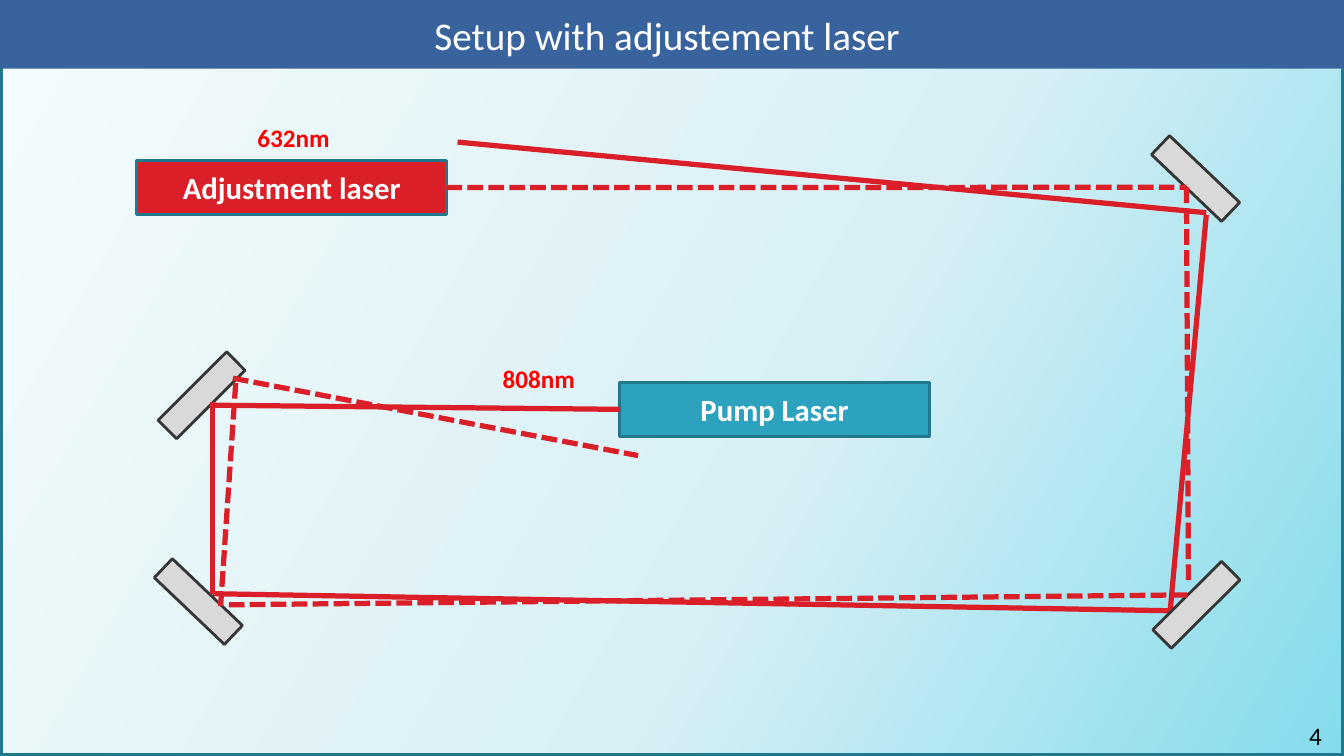
import copy
import pptx
import pptx.dml.color
import pptx.enum.dml
import pptx.enum.shapes
import pptx.enum.text
import pptx.oxml.ns
import pptx.oxml.xmlchemy
import pptx.util

Cm = pptx.util.Cm
Pt = pptx.util.Pt
ALIGN = pptx.enum.text.PP_ALIGN
MIDDLE = pptx.enum.text.MSO_ANCHOR.MIDDLE
SOLID = pptx.enum.dml.MSO_LINE.SOLID
DASHED = pptx.enum.dml.MSO_LINE.SQUARE_DOT

WIDTH, HEIGHT, BAND = 33.87, 19.05, 1.73
RED, TEAL = "DA1F28", "21788D"
LASER = {"size": Pt(22), "bold": True, "name": "Calibri"}
LABEL = {"size": Pt(18), "bold": True, "name": "Calibri"}
NUMBER = {"size": Pt(18), "bold": False, "name": "Calibri"}
TITLE = {"size": Pt(28), "bold": False, "name": "Calibri"}

FADE = [(0.02, "F4FBFC"), (0.59, "D8F0F5"), (1, "84DBEC")]
MIRRORS = [
    (28.91, 4.17, 43.6),
    (28.93, 14.91, 135.1),
    (3.78, 14.83, 43.6),
    (3.86, 9.63, 135.1),
]
BACK_BEAMS = [
    (11.53, 3.58, 30.4, 5.36),
    (29.49, 15.39, 30.4, 5.41),
    (5.36, 14.96, 29.49, 15.39),
]
DASH_BEAMS = [
    (29.9, 4.72, 29.95, 14.68),
    (29.92, 14.99, 5.77, 15.24),
    (5.94, 9.65, 5.56, 15.27),
    (5.87, 9.53, 16.08, 11.48),
]


def paint(color, code):
    color.rgb = pptx.dml.color.RGBColor.from_string(code)


def format_all(target, values):
    for key, value in values.items():
        setattr(target, key, value)


def stroke(line, code, width):
    line.fill.solid()
    paint(line.color, code)
    line.width = Pt(width)


def write(frame, text, font, code, align):
    part = frame.paragraphs[0]
    part.text = text
    part.alignment = align
    format_all(part.runs[0].font, font)
    paint(part.runs[0].font.color, code)


def add_box(slide, place, fill, edge=None, width=2):
    box = slide.shapes.add_shape(
        pptx.enum.shapes.MSO_SHAPE.RECTANGLE, *map(Cm, place))
    box.shadow.inherit = False
    box.fill.solid()
    paint(box.fill.fore_color, fill)
    if edge:
        stroke(box.line, edge, width)
    else:
        box.line.fill.background()
    return box


def add_panel(slide):
    panel = add_box(slide, (0, 0, WIDTH, HEIGHT), "FFFFFF", TEAL, 3.75)
    panel.fill.gradient()
    panel.fill.gradient_angle = 330
    stop = next(panel._element.iter(pptx.oxml.ns.qn("a:gs")))
    stop.addnext(copy.deepcopy(stop))
    for stop, (point, code) in zip(panel.fill.gradient_stops, FADE):
        stop.position = point
        paint(stop.color, code)


def add_laser(slide, left, top, text, fill):
    laser = add_box(slide, (left, top, 7.8, 1.37), fill, TEAL)
    laser.text_frame.vertical_anchor = MIDDLE
    write(laser.text_frame, text, LASER, "FFFFFF", ALIGN.CENTER)
    return laser


def add_mirror(slide, left, top, angle):
    mirror = add_box(slide, (left, top, 2.44, 0.66), "D9D9D9", "353535")
    mirror.rotation = angle


def add_beam(slide, ends, dash=SOLID):
    beam = slide.shapes.add_connector(
        pptx.enum.shapes.MSO_CONNECTOR.STRAIGHT, *map(Cm, ends))
    stroke(beam.line, RED, 3.75)
    beam.line.dash_style = dash
    beam._element.spPr.append(
        pptx.oxml.xmlchemy.OxmlElement("a:effectLst"))
    return beam


def add_text(slide, place, text, font, code, align):
    box = slide.shapes.add_textbox(*map(Cm, place))
    format_all(box.text_frame, {
        "word_wrap": False,
        "auto_size": pptx.enum.text.MSO_AUTO_SIZE.SHAPE_TO_FIT_TEXT,
    })
    write(box.text_frame, text, font, code, align)


def set_title(slide, text):
    title = slide.shapes.title
    format_all(title, {
        "left": Cm(1.57), "top": Cm(0),
        "width": Cm(30.48), "height": Cm(BAND),
    })
    title.text_frame.vertical_anchor = MIDDLE
    write(title.text_frame, text, TITLE, "FFFFFF", ALIGN.CENTER)
    slide.shapes._spTree.append(title._element)


def main():
    deck = pptx.Presentation()
    format_all(deck, {"slide_width": Cm(WIDTH), "slide_height": Cm(HEIGHT)})
    slide = deck.slides.add_slide(deck.slide_layouts[5])
    slide.background.fill.solid()
    paint(slide.background.fill.fore_color, "BFBFBF")

    add_panel(slide)
    add_box(slide, (0, 0, WIDTH, BAND), "39639D")
    add_text(slide, (32.74, 18.03, 1.68, 1.02), "4", NUMBER, "000000",
             ALIGN.LEFT)

    guide = add_laser(slide, 3.45, 4.04, "Adjustment laser", RED)
    pump = add_laser(slide, 15.62, 9.63, "Pump Laser", "2DA2BF")
    for ends in BACK_BEAMS:
        add_beam(slide, ends)
    for mirror in MIRRORS:
        add_mirror(slide, *mirror)
    add_beam(slide, (5.36, 14.96, 5.36, 10.13))
    add_beam(slide, (5.36, 10.21, 15.62, 10.26)).end_connect(pump, 1)

    set_title(slide, "Setup with adjustement laser")
    first = add_beam(slide, (11.25, 4.7, 29.9, 4.72), DASHED)
    first.begin_connect(guide, 3)
    for ends in DASH_BEAMS:
        add_beam(slide, ends, DASHED)
    for left, top, text in [(12.4, 9.02, "808nm"), (6.22, 2.97, "632nm")]:
        add_text(slide, (left, top, 2.36, 1.02), text, LABEL, "FF0000",
                 ALIGN.CENTER)
    deck.save("out.pptx")


if __name__ == "__main__":
    main()
